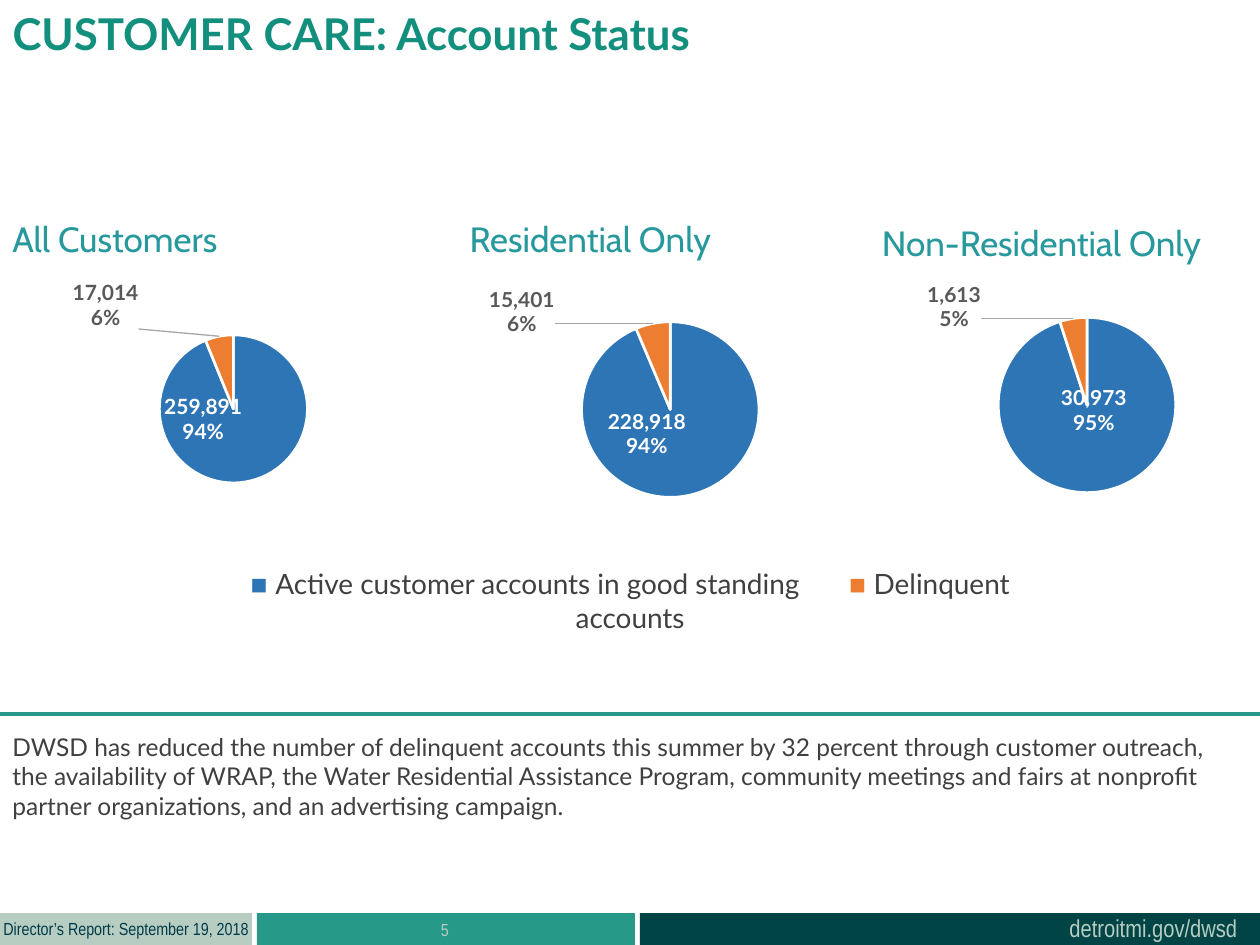
from lxml import etree
from pptx import Presentation
from pptx.chart.data import CategoryChartData
from pptx.dml.color import RGBColor
from pptx.enum.chart import XL_CHART_TYPE, XL_LABEL_POSITION
from pptx.enum.shapes import MSO_CONNECTOR, MSO_SHAPE
from pptx.enum.text import MSO_ANCHOR, PP_ALIGN
from pptx.oxml import parse_xml
from pptx.oxml.ns import nsdecls, qn
from pptx.util import Cm, Pt

PIE = XL_CHART_TYPE.PIE
CENTER_LABEL = XL_LABEL_POSITION.CENTER
OUTSIDE_LABEL = XL_LABEL_POSITION.OUTSIDE_END
STRAIGHT = MSO_CONNECTOR.STRAIGHT
RECTANGLE = MSO_SHAPE.RECTANGLE
TOP = MSO_ANCHOR.TOP
LEFT, CENTER = PP_ALIGN.LEFT, PP_ALIGN.CENTER

TEAL, DARK_TEAL, SAGE = "279989", "004445", "B7CDC2"
BLUE, ORANGE, DARK_GRAY = "2E75B6", "ED7D31", "404040"


def color(hex_string):
    return RGBColor.from_string(hex_string)


def add_text(box, text, font_name, size, text_color, wrap=True, align=LEFT):
    shape = slide.shapes.add_textbox(*[Cm(length) for length in box])
    shape.text_frame.word_wrap = wrap
    paragraph = shape.text_frame.paragraphs[0]
    paragraph.text = text
    paragraph.alignment = align
    paragraph.font.name = font_name
    paragraph.font.size = Pt(size)
    paragraph.font.color.rgb = color(text_color)
    return paragraph


presentation = Presentation()
presentation.slide_width, presentation.slide_height = Cm(25.4), Cm(19.05)
slide = presentation.slides.add_slide(presentation.slide_layouts[5])

# Footer bars
for left, width, fill in [(5.18, 7.62, TEAL), (12.9, 12.5, DARK_TEAL), (0, 5.08, SAGE)]:
    bar = slide.shapes.add_shape(RECTANGLE, Cm(left), Cm(18.41), Cm(width), Cm(0.64))
    bar.shadow.inherit = False
    bar.fill.solid()
    bar.fill.fore_color.rgb = color(fill)
    bar.line.fill.background()

# Footer texts
add_text((21.31, 18.29, 3.94, 0.86), "detroitmi.gov/dwsd", "Arial Narrow", 14, SAGE, wrap=False)
add_text((-0.18, 18.39, 5.49, 0.69), "Director’s Report: September 19, 2018",
         "Arial Narrow", 10, "003B49", wrap=False)
add_text((5.16, 18.41, 7.62, 1.02), "5", "Arial Narrow", 10, SAGE, align=CENTER)

# Title
title = slide.shapes.title
title.left, title.top, title.width, title.height = Cm(0), Cm(0), Cm(19.28), Cm(1.96)
title.text_frame.vertical_anchor = TOP
title.text_frame.word_wrap = True
paragraph = title.text_frame.paragraphs[0]
paragraph.text = "CUSTOMER CARE: Account Status"
paragraph.alignment = LEFT
paragraph.font.name = "Lato"
paragraph.font.size = Pt(25)
paragraph.font.bold = True
paragraph.font.color.rgb = color("138F7E")

# Summary below a full-width rule
add_text((0, 14.63, 25.15, 2.06),
         "DWSD has reduced the number of delinquent accounts this summer by 32 percent "
         "through customer outreach,\vthe availability of WRAP, the Water Residential "
         "Assistance Program, community meetings and fairs at nonprofit partner "
         "organizations, and an advertising campaign.", "Lato", 14, DARK_GRAY)
rule = slide.shapes.add_connector(STRAIGHT, Cm(0), Cm(14.4), Cm(25.4), Cm(14.4))
rule.line.color.rgb = color(TEAL)
rule.line.width = Pt(2.25)
etree.SubElement(rule._element.spPr, qn("a:effectLst"))

# Pies: heading, heading position, chart box, plot area, values, label offsets
pies = [
    ("All Customers", (0, 4.27), (0.1, 5.26, 9.4, 5.97), (0.33, 0.25, 0.32, 0.5),
     (259891, 17014), ((-0.08, -0.09), (-0.17, 0))),
    ("Residential Only", (9.22, 4.27), (8.59, 5.38, 10.82, 7.95), (0.01, 0.13, 0.89, 0.45),
     (228918, 15401), ((-0.06, -0.05), (-0.18, 0.05))),
    ("Non-Residential Only", (17.53, 4.34), (16.99, 5.28, 10.82, 7.95), (0.01, 0.13, 0.89, 0.45),
     (30973, 1613), ((0, -0.1), (-0.17, 0.05))),
]
slice_styles = [(BLUE, "FFFFFF", CENTER_LABEL), (ORANGE, "595959", OUTSIDE_LABEL)]

for heading, heading_position, box, plot_box, values, offsets in pies:
    add_text((*heading_position, 7.62, 1.12), heading, "Cabin", 20, "27999D")
    data = CategoryChartData(number_format="#,##0")
    data.categories = ["1", "2"]
    data.add_series("Series 1", values)
    chart = slide.shapes.add_chart(PIE, *[Cm(length) for length in box], data).chart
    chart.has_title = False
    chart.has_legend = False
    chart.font.name = "Calibri"
    chart.font.size = Pt(10)
    chart.font.color.rgb = color("000000")
    plot = chart.plots[0]
    plot.vary_by_categories = True

    # Plot area position inside the chart
    plot_area = chart._chartSpace.chart.plotArea
    for layout in plot_area.findall(qn("c:layout")):
        plot_area.remove(layout)
    x, y, width, height = plot_box
    plot_area.insert(0, parse_xml(
        f'<c:layout {nsdecls("c")}><c:manualLayout><c:layoutTarget val="inner"/>'
        f'<c:xMode val="edge"/><c:yMode val="edge"/><c:x val="{x}"/><c:y val="{y}"/>'
        f'<c:w val="{width}"/><c:h val="{height}"/></c:manualLayout></c:layout>'))

    # Values keep the data's format, so that percentages keep theirs
    series = plot.series[0]
    labels = series.data_labels
    labels.show_value = True
    labels.show_percentage = True
    labels.number_format = "#,##0"
    labels.number_format_is_linked = True
    labels.font.name = "Lato"
    labels.font.size = Pt(12)
    labels.font.bold = True
    labels.font.color.rgb = color("FFFFFF")
    for leader_flag in labels._element.findall(qn("c:showLeaderLines")):
        leader_flag.set("val", "1")
        leader_flag.addnext(parse_xml(
            f'<c:leaderLines {nsdecls("c", "a")}><c:spPr><a:ln w="9525"><a:solidFill>'
            '<a:srgbClr val="A6A6A6"/></a:solidFill></a:ln></c:spPr></c:leaderLines>'))

    # Slices and their labels
    for index, (fill, label_color, position) in enumerate(slice_styles):
        point = series.points[index]
        point.format.fill.solid()
        point.format.fill.fore_color.rgb = color(fill)
        point.format.line.color.rgb = color("FFFFFF")
        point.format.line.width = Pt(1.5)
        label = point.data_label
        label.font.name = "Lato"
        label.font.size = Pt(12)
        label.font.bold = True
        label.font.color.rgb = color(label_color)
        label.position = position
        element = label._get_or_add_dLbl()
        x, y = offsets[index]
        layout = parse_xml(
            f'<c:layout {nsdecls("c")}><c:manualLayout><c:x val="{x}"/><c:y val="{y}"/>'
            '</c:manualLayout></c:layout>')
        element.find(qn("c:idx")).addnext(layout)
        layout.addnext(parse_xml(
            f'<c:numFmt {nsdecls("c")} formatCode="#,##0" sourceLinked="1"/>'))
        element.find(qn("c:showPercent")).set("val", "1")
        etree.SubElement(element, qn("c:separator")).text = "\n"

    # Label lines stay whole
    for body in labels._element.iter(qn("a:bodyPr")):
        body.set("wrap", "none")

# Shared legend, its two entries set apart by one widely spaced blank
legend = add_text((4.07, 11.3, 17.27, 0.94), "", "Lato", 16, DARK_GRAY, align=CENTER)
for text, font_name, text_color in [
    ("■ ", "Arial", BLUE),
    ("Active customer accounts in good standing", "Lato", DARK_GRAY),
    (" ", "Lato", DARK_GRAY),
    ("■ ", "Arial", ORANGE),
    ("Delinquent accounts", "Lato", DARK_GRAY),
]:
    run = legend.add_run()
    run.text = text
    run.font.name = font_name
    run.font.color.rgb = color(text_color)
    if text == " ":
        run._r.get_or_add_rPr().set("spc", "2400")

presentation.save("out.pptx")
